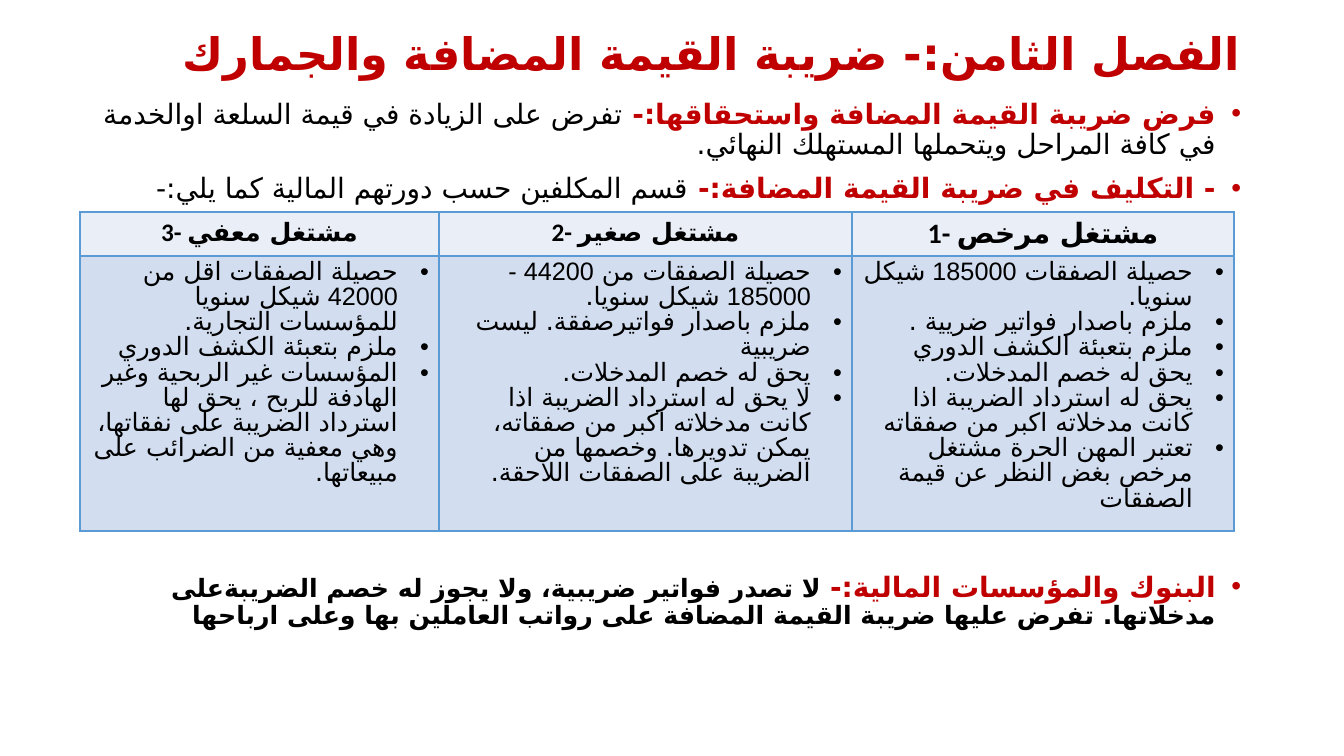
from itertools import groupby

from lxml import etree
from pptx import Presentation, util as u
from pptx.dml.color import RGBColor
from pptx.enum import text
from pptx.oxml import ns

SCALE = 914400 / 100.8  # EMU in one px
RED, BLACK, BORDER = "C00000", "000000", "5B9BD5"
HEADER_FILL, BODY_FILL = "EAEFF7", "D2DEEF"
ARABIC_FONT, DIGIT_FONT = "DejaVu Sans", "Arial"
RIGHT, CENTER = text.PP_ALIGN.RIGHT, text.PP_ALIGN.CENTER

TITLE = "الفصل الثامن:- ضريبة القيمة المضافة والجمارك"
IMPOSITION = [
    [("فرض ضريبة القيمة المضافة واستحقاقها:- ", RED, 20, True),
     ("تفرض على الزيادة في قيمة السلعة اوالخدمة في كافة المراحل ويتحملها المستهلك النهائي.",
      BLACK, 20, False)],
    [("- التكليف في ضريبة القيمة المضافة:- ", RED, 20, True),
     ("قسم المكلفين حسب دورتهم المالية كما يلي:-", BLACK, 20, False)],
]
BANKS = [
    [("البنوك والمؤسسات المالية:-", RED, 20, True),
     (" لا تصدر فواتير ضريبية، ولا يجوز له خصم الضريبةعلى مدخلاتها. "
      "تفرض عليها ضريبة القيمة المضافة على رواتب العاملين بها وعلى ارباحها",
      BLACK, 18, True)],
]
# Taxpayer classes: width, heading, heading size, points
CLASSES = [
    (359, "3- مشتغل معفي", 18, [
        "حصيلة الصفقات اقل من 42000 شيكل سنويا للمؤسسات التجارية.",
        "ملزم بتعبئة الكشف الدوري",
        "المؤسسات غير الربحية وغير الهادفة للربح ، يحق لها استرداد الضريبة على نفقاتها، "
        "وهي معفية من الضرائب على مبيعاتها."]),
    (413, "2- مشتغل صغير", 18, [
        "حصيلة الصفقات من 44200 - 185000 شيكل سنويا.",
        "ملزم باصدار فواتيرصفقة. ليست ضريبية",
        "يحق له خصم المدخلات.",
        "لا يحق له استرداد الضريبة اذا كانت مدخلاته اكبر من صفقاته، "
        "يمكن تدويرها. وخصمها من الضريبة على الصفقات اللاحقة."]),
    (382, "1- مشتغل مرخص", 20, [
        "حصيلة الصفقات 185000 شيكل سنويا.",
        "ملزم باصدار فواتير ضريية .",
        "ملزم بتعبئة الكشف الدوري",
        "يحق له خصم المدخلات.",
        "يحق له استرداد الضريبة اذا كانت مدخلاته اكبر من صفقاته",
        "تعتبر المهن الحرة مشتغل مرخص بغض النظر عن قيمة الصفقات"]),
]


def px(n):
    return u.Emu(round(n * SCALE))


def color(value):
    return RGBColor.from_string(value)


def add_run(p, words, size=18, fill=BLACK, bold=False, cs=ARABIC_FONT):
    r = p.add_run()
    r.text = words
    r.font.size, r.font.bold, r.font.name = u.Pt(size), bold, "Calibri"
    r.font.color.rgb = color(fill)
    etree.SubElement(r.font._element, ns.qn("a:cs"), typeface=cs)


def is_number(word):
    return word.strip() == "-" or word.strip().isdigit()


def add_point(p, point):
    """Write a point with its numbers in the digit font."""
    words = point.replace(" ", " \n").split("\n")
    for number, group in groupby(words, is_number):
        add_run(p, "".join(group), cs=DIGIT_FONT if number else ARABIC_FONT)


def format_paragraph(p, align=RIGHT, rtl=True, indent=0, spacing=None, before=0):
    p.alignment, p.line_spacing, p.space_before = align, spacing, u.Pt(before)
    pPr = p._p.get_or_add_pPr()
    pPr.set("rtl", str(int(rtl)))
    if indent:
        pPr.set("marL", str(px(indent)))
        pPr.set("indent", str(-px(indent)))
        etree.SubElement(pPr, ns.qn("a:buFont"), typeface="Arial")
        etree.SubElement(pPr, ns.qn("a:buChar"), char="•")


def paragraphs(tf, items):
    for i, item in enumerate(items):
        yield i, tf.paragraphs[0] if i == 0 else tf.add_paragraph(), item


def add_text(s, box, items, indent=0, anchor=text.MSO_ANCHOR.TOP):
    tf = s.shapes.add_textbox(*map(px, box)).text_frame
    tf.word_wrap, tf.vertical_anchor = True, anchor
    for i, p, runs in paragraphs(tf, items):
        format_paragraph(p, indent=indent, spacing=0.9, before=10 if i else 0)
        for words, fill, size, bold in runs:
            add_run(p, words, size=size, fill=fill, bold=bold)


def style_cell(cell, fill):
    cell.fill.solid()
    cell.fill.fore_color.rgb = color(fill)
    tcPr = cell._tc.get_or_add_tcPr()
    for i, side in enumerate(("lnL", "lnR", "lnT", "lnB")):
        line = etree.Element(ns.qn("a:" + side), w=str(u.Pt(1)))
        solid = etree.SubElement(line, ns.qn("a:solidFill"))
        etree.SubElement(solid, ns.qn("a:srgbClr"), val=BORDER)
        tcPr.insert(i, line)


def add_class_table(s, left, top, heights):
    width = sum(c[0] for c in CLASSES)
    table = s.shapes.add_table(2, len(CLASSES), px(left), px(top),
                               px(width), px(sum(heights))).table
    for row, height in zip(table.rows, heights):
        row.height = px(height)
    for col, (width, heading, size, points) in enumerate(CLASSES):
        table.columns[col].width = px(width)
        head, body = table.cell(0, col), table.cell(1, col)
        style_cell(head, HEADER_FILL)
        style_cell(body, BODY_FILL)
        p = head.text_frame.paragraphs[0]
        format_paragraph(p, align=CENTER, rtl=False)
        add_run(p, heading, size=size, bold=True)
        for _, p, point in paragraphs(body.text_frame, points):
            format_paragraph(p, indent=31, spacing=u.Pt(18))
            add_point(p, point)


def main():
    prs = Presentation()
    prs.slide_width, prs.slide_height = px(1344), px(756)
    s = prs.slides.add_slide(prs.slide_layouts[6])

    # Title and introduction
    add_text(s, (92, 25, 1159, 61), [[(TITLE, RED, 32, True)]],
             anchor=text.MSO_ANCHOR.MIDDLE)
    add_text(s, (92, 95, 1159, 115), IMPOSITION, indent=25)

    # Taxpayer classes
    add_class_table(s, 80, 212, (44, 275))

    # Banks
    add_text(s, (92, 568, 1159, 80), BANKS, indent=25)
    prs.save("out.pptx")


if __name__ == "__main__":
    main()
